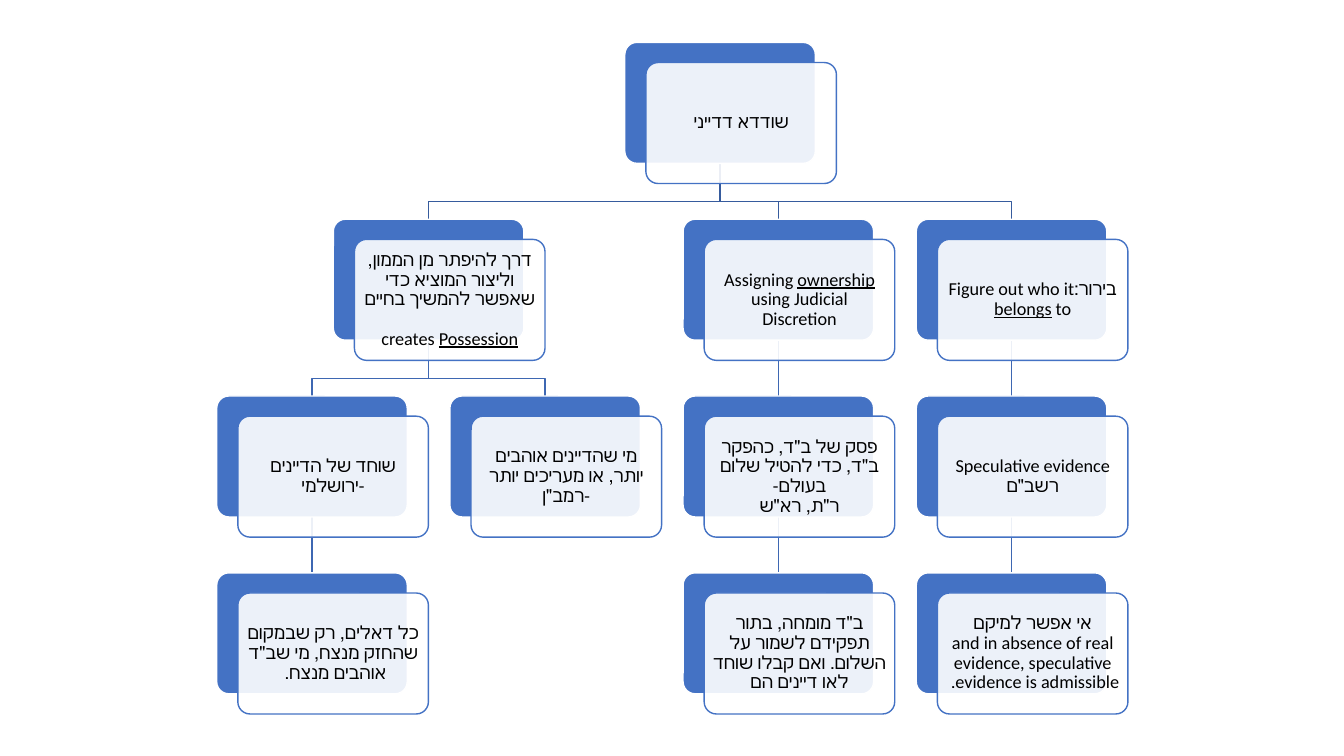
import pptx
import pptx.util
import pptx.dml.color
import pptx.enum.shapes
import pptx.enum.text
import pptx.oxml
import pptx.oxml.ns
import lxml.etree

Pt = pptx.util.Pt
qn = pptx.oxml.ns.qn
COLORS = {"blue": "4472C4", "white": "FFFFFF", "text": "000000",
          "upper": "365B9D", "lower": "3E67B2"}
LEFT, TOP, COL, ROW = 154.8, 30.3, 166.56, 126.3
WIDTH, HEIGHT, SHIFT_X, SHIFT_Y = 136.1, 86.4, 15.1, 14.4
ELBOW = 27.2

# name: (column, row, parent, text with _underlined_ words)
NODES = {
    "root": (1.75, 0, None, "שודדא דדייני"),
    "possession": (0.5, 1, "root", "דרך להיפתר מן הממון, וליצור המוציא כדי שאפשר להמשיך בחיים \ncreates _Possession_"),
    "bribe": (0, 2, "possession", "שוחד של הדיינים\n-ירושלמי"),
    "stronger": (0, 3, "bribe", "כל דאלים, רק שבמקום שהחזק מנצח, מי שב\"ד אוהבים מנצח. "),
    "favoured": (1, 2, "possession", "מי שהדיינים אוהבים יותר, או מעריכים יותר\n-רמב\"ן"),
    "ownership": (2, 1, "root", "Assigning _ownership_ using Judicial Discretion"),
    "ruling": (2, 2, "ownership", "פסק של ב\"ד, כהפקר ב\"ד, כדי להטיל שלום בעולם-\nר\"ת, רא\"ש"),
    "expert": (2, 3, "ruling", "ב\"ד מומחה, בתור תפקידם לשמור על השלום. ואם קבלו שוחד לאו דיינים הם"),
    "belongs": (3, 1, "root", "בירור:Figure out who it _belongs_ to"),
    "evidence": (3, 2, "belongs", "Speculative evidence\nרשב\"ם"),
    "admissible": (3, 3, "evidence", "אי אפשר למיקם\nand in absence of real evidence, speculative evidence is admissible. "),
}


class Chart:
    """Draws the parts of a hierarchy on one slide in one style."""

    def __init__(self, s, font="Calibri", size=13):
        self.s, self.font, self.size = s, font, size

    def rgb(self, name):
        return pptx.dml.color.RGBColor.from_string(COLORS[name])

    def line(self, shape, color):
        shape.line.color.rgb = self.rgb(color)
        shape.line.width = Pt(1)

    def straight(self, x, y1, y2, color):
        c = self.s.shapes.add_connector(
            pptx.enum.shapes.MSO_CONNECTOR.STRAIGHT, Pt(x), Pt(y1), Pt(x), Pt(y2))
        lxml.etree.SubElement(c._element.spPr, qn("a:effectLst"))
        self.line(c, color)
        return c

    def elbow(self, x1, y1, x2, y2, color):
        fb = self.s.shapes.build_freeform(Pt(x1), Pt(y1))
        bend = y1 + ELBOW
        fb.add_line_segments([(Pt(x), Pt(y)) for x, y in
                              ((x1, bend), (x2, bend), (x2, y2))], close=False)
        sp = fb.convert_to_shape()
        sp.shadow.inherit = False
        sp.fill.background()
        self.line(sp, color)

    def box(self, x, y, fill, line, alpha=100):
        sp = self.s.shapes.add_shape(
            pptx.enum.shapes.MSO_SHAPE.ROUNDED_RECTANGLE, Pt(x), Pt(y), Pt(WIDTH), Pt(HEIGHT))
        sp.adjustments[0] = 0.1
        sp.shadow.inherit = False
        sp.fill.solid()
        sp.fill.fore_color.rgb = self.rgb(fill)
        if alpha < 100:
            clr = sp._element.spPr.find(qn("a:solidFill")).find(qn("a:srgbClr"))
            lxml.etree.SubElement(clr, qn("a:alpha"), val=str(alpha * 1000))
        self.line(sp, line)
        return sp

    def text(self, sp, text):
        tf = sp.text_frame
        tf.word_wrap = True
        tf.vertical_anchor = pptx.enum.text.MSO_ANCHOR.MIDDLE
        tf.margin_left = tf.margin_right = tf.margin_top = tf.margin_bottom = Pt(3.6)
        p = tf.paragraphs[0]
        p.alignment = pptx.enum.text.PP_ALIGN.CENTER
        p.line_spacing = 0.9
        p._p.get_or_add_pPr().set("rtl", "1")
        for i, row in enumerate(text.split("\n")):
            if i:
                p.add_line_break()
            for j, piece in enumerate(row.split("_")):
                if piece:
                    r = p.add_run()
                    r.text = piece
                    r.font.name, r.font.size = self.font, Pt(self.size)
                    r.font.color.rgb = self.rgb("text")
                    r.font.underline = True if j % 2 else None
        for br in p._p.findall(qn("a:br")):
            lxml.etree.SubElement(br, qn("a:rPr"), sz=str(self.size * 100))

    def node(self, x, y, text):
        back = self.box(x, y, "blue", "white")
        self.text(self.box(x + SHIFT_X, y + SHIFT_Y, "white", "blue", 90), text)
        return back


def main():
    prs = pptx.Presentation()
    prs.slide_width, prs.slide_height = Pt(960), Pt(540)
    chart = Chart(prs.slides.add_slide(prs.slide_layouts[6]))
    spots = {name: (LEFT + COL * col, TOP + ROW * row)
             for name, (col, row, parent, text) in NODES.items()}

    joins = []
    for name, (col, row, parent, text) in reversed(NODES.items()):
        if parent is None:
            continue
        (px, py), (x, y) = spots[parent], spots[name]
        color = "upper" if row == 1 else "lower"
        if px == x:
            c = chart.straight(x + WIDTH / 2, py + HEIGHT, y, color)
            joins.append((c, parent, name))
        else:
            chart.elbow(px + WIDTH / 2, py + HEIGHT, x + WIDTH / 2, y, color)

    backs = {name: chart.node(*spots[name], node[3]) for name, node in NODES.items()}
    for c, parent, name in joins:
        c.begin_connect(backs[parent], 2)
        c.end_connect(backs[name], 0)
    prs.save("out.pptx")


if __name__ == "__main__":
    main()
